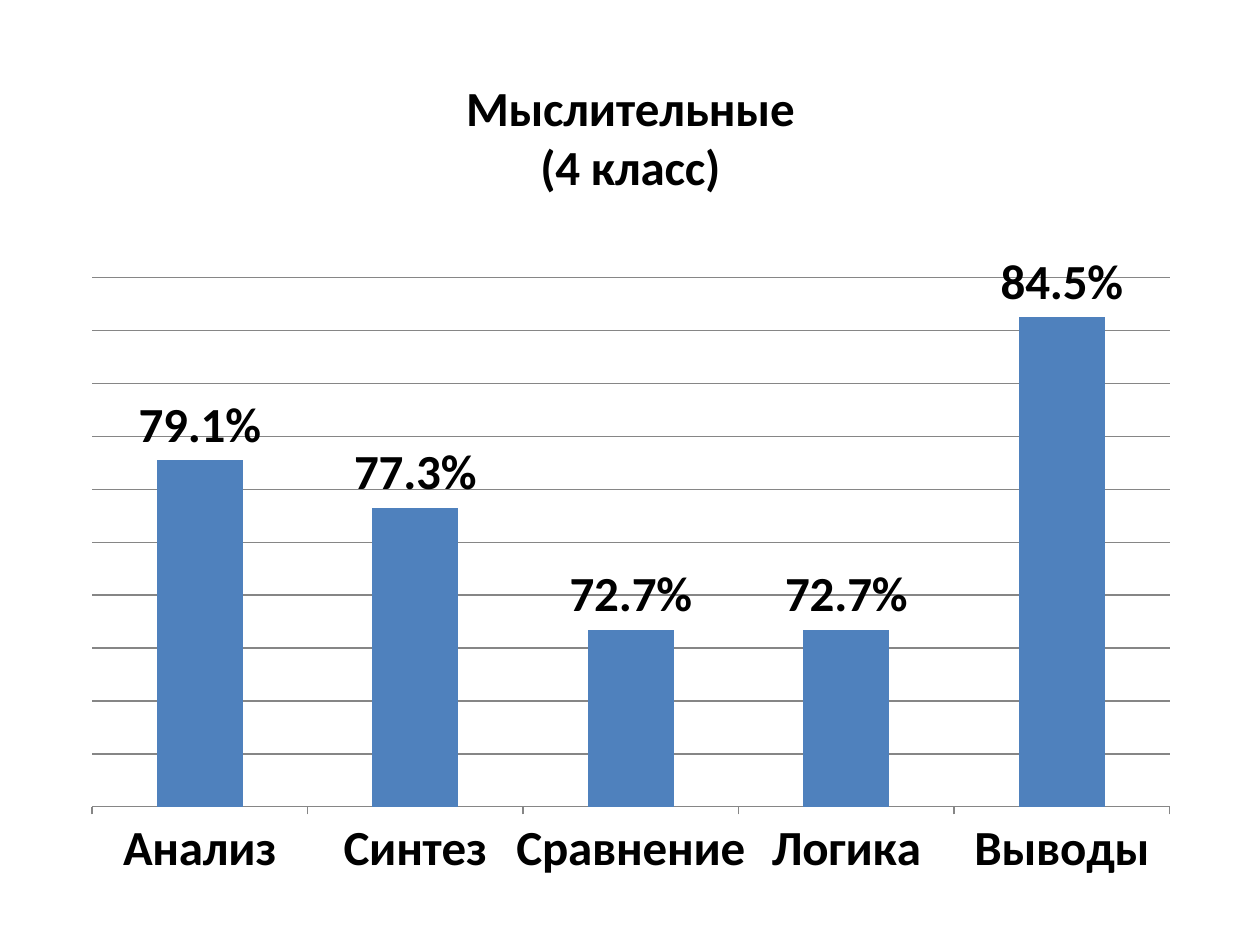
from lxml import etree
from pptx import Presentation
from pptx.chart.data import CategoryChartData
from pptx.dml.color import RGBColor
from pptx.enum.chart import XL_CHART_TYPE, XL_LABEL_POSITION, XL_TICK_LABEL_POSITION, XL_TICK_MARK
from pptx.oxml.ns import qn
from pptx.util import Cm, Pt

COLUMNS = XL_CHART_TYPE.COLUMN_CLUSTERED
OUTSIDE_END = XL_LABEL_POSITION.OUTSIDE_END
LABELS_LOW = XL_TICK_LABEL_POSITION.LOW
TICK_OUTSIDE = XL_TICK_MARK.OUTSIDE

BLACK = RGBColor(0x00, 0x00, 0x00)
BLUE = RGBColor(0x4F, 0x81, 0xBD)
GRAY = RGBColor(0x86, 0x86, 0x86)
FONT = "Calibri"
PERCENT = "0.0%"

TITLE_LINES = ("Мыслительные", "(4 класс)")
SKILL_SHARES = {
    "Анализ": 0.791,
    "Синтез": 0.773,
    "Сравнение": 0.727,
    "Логика": 0.727,
    "Выводы": 0.845,
}


def style_font(font, size=28, bold=True):
    font.name = FONT
    font.size = Pt(size)
    font.bold = bold
    font.color.rgb = BLACK


def set_layout(parent, index, **settings):
    """Place a chart part by fractions of the chart area."""
    for old_layout in parent.findall(qn("c:layout")):
        parent.remove(old_layout)
    layout = etree.Element(qn("c:layout"))
    manual = etree.SubElement(layout, qn("c:manualLayout"))
    for tag, value in settings.items():
        etree.SubElement(manual, qn(f"c:{tag}")).set("val", str(value))
    parent.insert(index, layout)


def add_chart_title(chart):
    chart.has_title = True
    title = chart.chart_title
    title.include_in_layout = False
    frame = title.text_frame
    frame.text = "\n".join(TITLE_LINES)
    for paragraph in frame.paragraphs:
        style_font(paragraph.font)
        for run in paragraph.runs:
            style_font(run.font)
    set_layout(title._element, 1, xMode="edge", yMode="edge", x=0.35, y=0.03)


def style_axes(chart):
    skills = chart.category_axis
    skills.major_tick_mark = TICK_OUTSIDE
    skills.tick_label_position = LABELS_LOW
    skills.format.line.color.rgb = GRAY
    style_font(skills.tick_labels.font)

    shares = chart.value_axis
    shares.visible = False
    shares.minimum_scale, shares.maximum_scale = 0.66, 0.86
    shares.major_unit = 0.02
    shares.tick_labels.number_format = PERCENT
    shares.tick_labels.number_format_is_linked = False
    shares.has_major_gridlines = True
    shares.major_gridlines.format.line.color.rgb = GRAY


def style_columns(plot):
    plot.gap_width = 150
    plot.vary_by_categories = False
    fill = plot.series[0].format.fill
    fill.solid()
    fill.fore_color.rgb = BLUE

    plot.has_data_labels = True
    labels = plot.data_labels
    labels.show_value = True
    labels.number_format = PERCENT
    labels.number_format_is_linked = False
    labels.position = OUTSIDE_END
    style_font(labels.font)


def add_skills_chart(slide):
    data = CategoryChartData(number_format=PERCENT)
    data.categories = list(SKILL_SHARES)
    data.add_series("Series 1", list(SKILL_SHARES.values()))
    chart = slide.shapes.add_chart(
        COLUMNS, Cm(1.4), Cm(0.99), Cm(22.63), Cm(17.07), data
    ).chart
    chart.has_legend = False
    style_font(chart.font, size=10, bold=False)
    add_chart_title(chart)
    style_axes(chart)
    style_columns(chart.plots[0])
    plot_area = chart._chartSpace.chart.plotArea
    set_layout(plot_area, 0, layoutTarget="inner", xMode="edge", yMode="edge",
               x=0.02, y=0.27, w=0.96, h=0.625)


def main():
    presentation = Presentation()
    presentation.slide_width, presentation.slide_height = Cm(25.4), Cm(19.05)
    slide = presentation.slides.add_slide(presentation.slide_layouts[6])
    add_skills_chart(slide)
    presentation.save("out.pptx")


if __name__ == "__main__":
    main()
